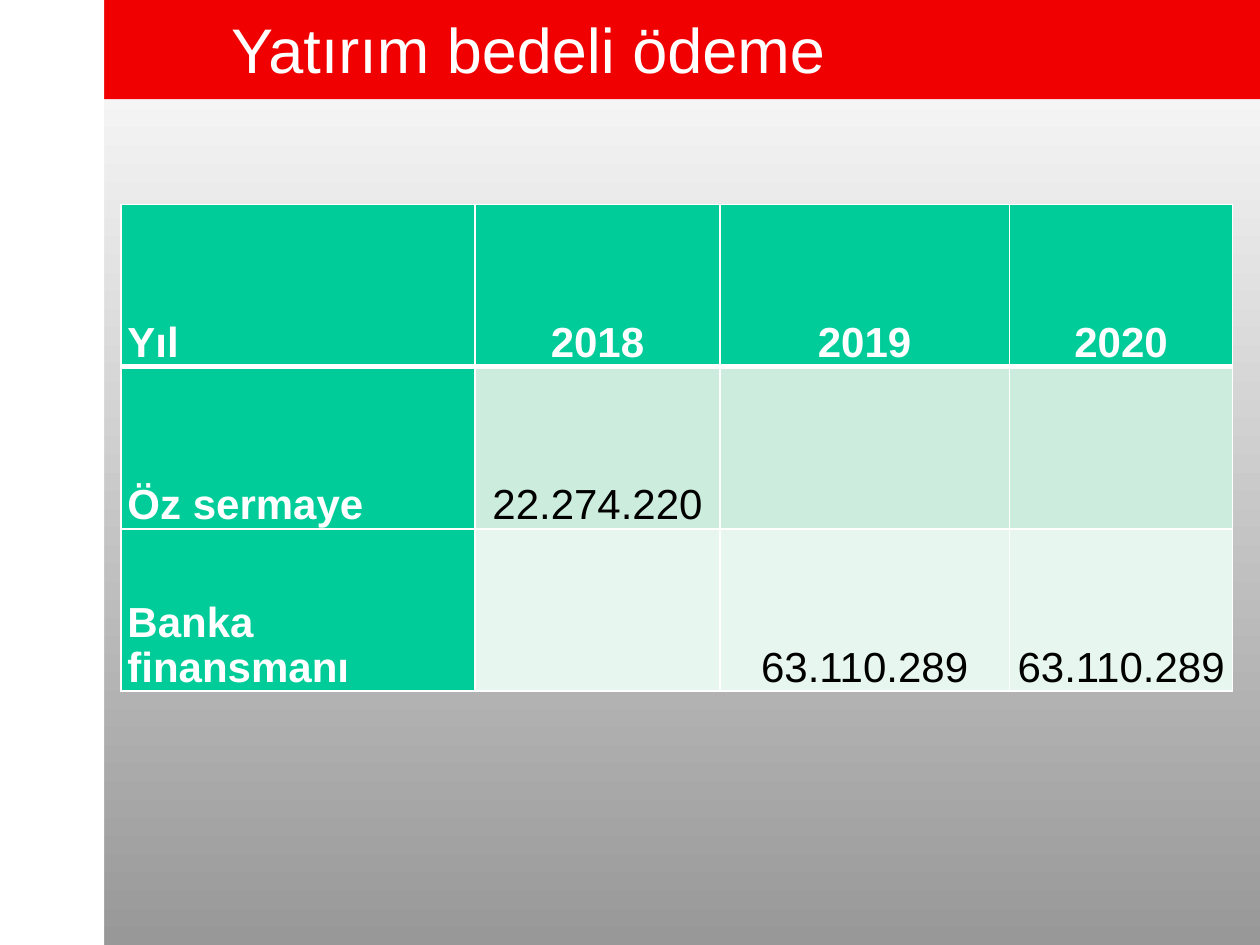
from lxml import etree
from pptx import Presentation
from pptx.dml.color import RGBColor
from pptx.enum import shapes, text
from pptx.oxml.ns import qn
from pptx.util import Cm, Pt

TITLE = "Yatırım bedeli ödeme "
ROWS = [
    ("Yıl", "2018", "2019", "2020"),
    ("Öz sermaye", "22.274.220", "", ""),
    ("Banka finansmanı", "", "63.110.289", "63.110.289"),
]
COLORS = {
    "white": "FFFFFF", "grey": "989898", "red": "F00000", "black": "000000",
    "green": "00CC99", "band1": "CCECDE", "band2": "E7F6EF",
}
BANDS = [("red", 25.4, 2), ("white", 2.1, 19.05)]
COL_WIDTHS = [7.14, 4.93, 5.84, 4.5]
ROW_HEIGHT = 3.27
CELL_FORMAT = {
    "vertical_anchor": text.MSO_ANCHOR.BOTTOM,
    "margin_left": Cm(0.13), "margin_right": Cm(0.13),
    "margin_top": 0, "margin_bottom": 0,
}


def rgb(name):
    return RGBColor.from_string(COLORS[name])


def apply(obj, values):
    for key, value in values.items():
        setattr(obj, key, value)


def style_text(p, size, color, bold, align):
    apply(p, {"alignment": align})
    for item in [p.font] + [r.font for r in p.runs]:
        apply(item, {"name": "Arial", "size": Pt(size), "bold": bold})
        item.color.rgb = rgb(color)


def add_border(cell, side, width):
    tc_pr = cell._tc.get_or_add_tcPr()
    ln = etree.SubElement(tc_pr, qn(f"a:ln{side}"), w=str(Pt(width)))
    fill = etree.SubElement(ln, qn("a:solidFill"))
    etree.SubElement(fill, qn("a:srgbClr"), val=COLORS["white"])


def format_cell(cell, value, row, col):
    heading = row == 0 or col == 0
    for side in "LRTB":
        under_header = (row, side) in ((0, "B"), (1, "T"))
        add_border(cell, side, 3 if under_header else 1)
    cell.fill.solid()
    cell.fill.fore_color.rgb = rgb("green" if heading else f"band{row}")
    apply(cell, CELL_FORMAT)
    cell.text = value
    p = cell.text_frame.paragraphs[0]
    p.line_spacing = 0.95
    style_text(p, 24, "white" if heading else "black", heading,
               text.PP_ALIGN.CENTER if col else text.PP_ALIGN.LEFT)


def main():
    prs = Presentation()
    apply(prs, {"slide_width": Cm(25.4), "slide_height": Cm(19.05)})
    s = prs.slides.add_slide(prs.slide_layouts[5])

    bg = s.background.fill
    bg.gradient()
    bg.gradient_angle = 270
    for stop, color in zip(bg.gradient_stops, ("white", "grey")):
        stop.color.rgb = rgb(color)

    for color, width, height in BANDS:
        sp = s.shapes.add_shape(shapes.MSO_SHAPE.RECTANGLE, 0, 0, Cm(width), Cm(height))
        sp.shadow.inherit = False
        sp.fill.solid()
        sp.fill.fore_color.rgb = rgb(color)
        sp.line.fill.background()

    title = s.shapes.title
    title.element.getparent().append(title.element)
    apply(title, {"left": Cm(0.03), "top": 0, "width": Cm(21.59), "height": Cm(1.96)})
    tf = title.text_frame
    tf.text = TITLE
    apply(tf, {"vertical_anchor": text.MSO_ANCHOR.MIDDLE, "word_wrap": True,
               "auto_size": text.MSO_AUTO_SIZE.NONE})
    style_text(tf.paragraphs[0], 36, "white", False, text.PP_ALIGN.CENTER)

    table = s.shapes.add_table(
        len(ROWS), len(COL_WIDTHS), Cm(2.44), Cm(4.12),
        Cm(sum(COL_WIDTHS)), Cm(ROW_HEIGHT * len(ROWS))).table
    for column, width in zip(table.columns, COL_WIDTHS):
        column.width = Cm(width)
    for i, values in enumerate(ROWS):
        table.rows[i].height = Cm(ROW_HEIGHT)
        for j, value in enumerate(values):
            format_cell(table.cell(i, j), value, i, j)

    prs.save("out.pptx")


if __name__ == "__main__":
    main()
